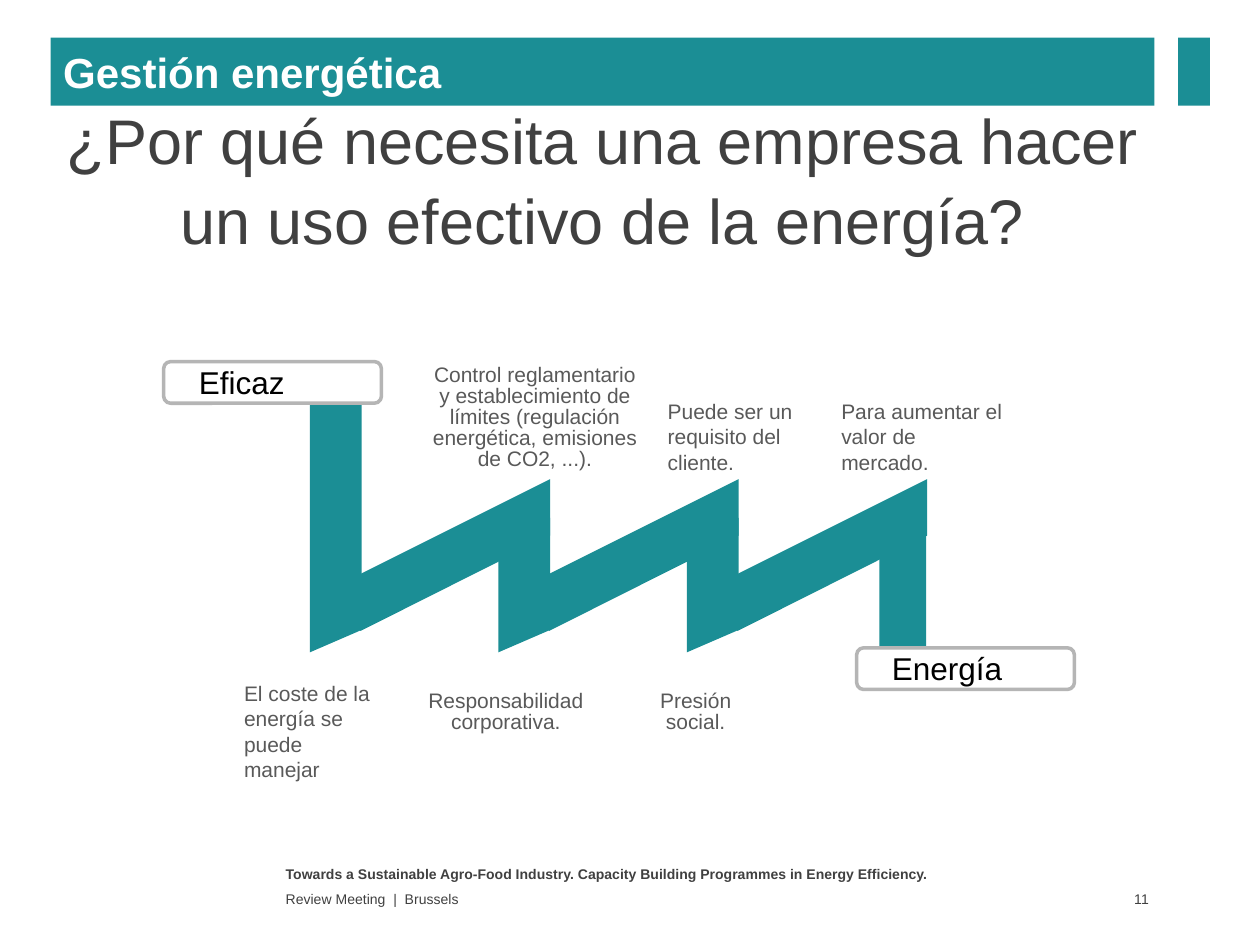
from pptx import Presentation
from pptx import util as u
from pptx.dml.color import RGBColor
from pptx.enum import shapes, text

TEAL = RGBColor(0x1B, 0x8E, 0x95)
WHITE = RGBColor(0xFF, 0xFF, 0xFF)
BLACK = RGBColor(0x00, 0x00, 0x00)
SILVER = RGBColor(0xB5, 0xB5, 0xB5)
DARK = RGBColor(0x40, 0x40, 0x40)
GREY = RGBColor(0x59, 0x59, 0x59)

LEFT, CENTER, RIGHT = text.PP_ALIGN.LEFT, text.PP_ALIGN.CENTER, text.PP_ALIGN.RIGHT
TOP, MIDDLE = text.MSO_ANCHOR.TOP, text.MSO_ANCHOR.MIDDLE

# All positions are (left, top, width, height) in centimetres.
TITLE = ("Gestión energética", (1.02, 0.76, 22.25, 1.37))
TITLE_ACCENT = (23.75, 0.76, 0.64, 1.37)
QUESTION = ("¿Por qué necesita una empresa hacer un uso efectivo de la energía?",
            (1.02, 2.13, 22.25, 2.9))

# text, position, bold, alignment, anchor
FOOTERS = [
    ("Towards a Sustainable Agro-Food Industry. Capacity Building Programmes in "
     "Energy Efficiency.", (5.51, 17.32, 13.97, 0.53), True, LEFT, TOP),
    ("Review Meeting  |  Brussels", (5.51, 17.88, 13.97, 0.48), False, LEFT, MIDDLE),
    ("11", (21.84, 17.86, 1.42, 0.51), False, RIGHT, MIDDLE),
]

# text, left and top of the box
END_LABELS = [("Eficaz", 3.3, 7.29), ("Energía", 17.27, 13.06)]
END_LABEL_SIZE = (4.39, 0.84)

# text, position, alignment, line spacing in points
REASONS = [
    ("El coste de la energía se puede manejar", (4.67, 13.59, 3.05, 2.41), LEFT, 14.5),
    ("Responsabilidad corporativa.", (8.36, 13.82, 3.68, 1.14), CENTER, 12),
    ("Presión social.", (12.5, 13.82, 3.05, 1.14), CENTER, 12),
    ("Control reglamentario y establecimiento de límites (regulación energética, "
     "emisiones de CO2, ...).", (8.36, 7.24, 4.85, 2.41), CENTER, 12),
    ("Puede ser un requisito del cliente.", (13.21, 7.9, 3.05, 1.98), LEFT, 14.5),
    ("Para aumentar el valor de mercado.", (16.71, 7.9, 3.78, 1.98), LEFT, 14.5),
]

ZIGZAG_LEFT, ZIGZAG_PITCH, STEM_WIDTH = 6.25, 3.8, 1.04
STEM_TOPS = [8.13, 10.44, 10.44]
STEM_BOTTOM_LEFT, STEM_BOTTOM_RIGHT = 13.15, 12.7
LAST_STEM = (17.73, 10.57, 0.94, 2.49)


def place(shape, position):
    for name, value in zip(("left", "top", "width", "height"), position):
        setattr(shape, name, u.Cm(value))


def paint(shape, fill, line=None):
    shape.shadow.inherit = False
    shape.fill.solid()
    shape.fill.fore_color.rgb = fill
    if line is None:
        shape.line.fill.background()
    else:
        shape.line.color.rgb = line
        shape.line.width = u.Pt(2)


def write(shape, words, size, color, bold=False, anchor=TOP, **paragraph_format):
    frame = shape.text_frame
    frame.text = words
    frame_format = {"word_wrap": True, "auto_size": text.MSO_AUTO_SIZE.NONE,
                    "vertical_anchor": anchor}
    for name, value in frame_format.items():
        setattr(frame, name, value)
    paragraph = frame.paragraphs[0]
    for name, value in paragraph_format.items():
        setattr(paragraph, name, value)
    font = paragraph.runs[0].font
    for name, value in {"name": "Arial", "size": u.Pt(size), "bold": bold}.items():
        setattr(font, name, value)
    font.color.rgb = color


def add_box(slide, position, *args, **formats):
    box = slide.shapes.add_textbox(*map(u.Cm, position))
    write(box, *args, **formats)
    return box


def add_block(slide, kind, position, fill, line=None):
    block = slide.shapes.add_shape(kind, *map(u.Cm, position))
    paint(block, fill, line)


def add_polygon(slide, points):
    start, *rest = [(u.Cm(x), u.Cm(y)) for x, y in points]
    builder = slide.shapes.build_freeform(*start)
    builder.add_line_segments(rest, close=True)
    paint(builder.convert_to_shape(), TEAL)


def add_zigzag(slide):
    """Draw three slanted-foot stems, each with its rising bar, and the last stem."""
    for index, top in enumerate(STEM_TOPS):
        left = ZIGZAG_LEFT + index * ZIGZAG_PITCH
        right = left + STEM_WIDTH
        next_right = right + ZIGZAG_PITCH
        add_polygon(slide, [(left, top), (right, top), (right, STEM_BOTTOM_RIGHT),
                            (left, STEM_BOTTOM_LEFT)])
        add_polygon(slide, [(left + 0.56, 11.8), (next_right, 9.66),
                            (next_right, 10.8), (left + 1.02, 12.72)])
    add_block(slide, shapes.MSO_SHAPE.RECTANGLE, LAST_STEM, TEAL)


def main():
    presentation = Presentation()
    presentation.slide_width, presentation.slide_height = u.Cm(25.4), u.Cm(19.05)
    slide = presentation.slides.add_slide(presentation.slide_layouts[5])

    words, position = TITLE
    title = slide.shapes.title
    place(title, position)
    paint(title, TEAL)
    write(title, words, 24, WHITE, bold=True, anchor=MIDDLE, alignment=LEFT)
    add_block(slide, shapes.MSO_SHAPE.RECTANGLE, TITLE_ACCENT, TEAL)

    words, position = QUESTION
    add_box(slide, position, words, 36, DARK, anchor=MIDDLE, alignment=CENTER,
            line_spacing=1.05)

    for words, position, bold, alignment, anchor in FOOTERS:
        box = add_box(slide, position, words, 8, DARK, bold=bold, anchor=anchor,
                      alignment=alignment)
        if alignment == RIGHT:
            box.text_frame.margin_right = u.Cm(0.1)

    add_zigzag(slide)

    for words, left, top in END_LABELS:
        add_block(slide, shapes.MSO_SHAPE.ROUNDED_RECTANGLE,
                  (left, top, *END_LABEL_SIZE), WHITE, SILVER)
        add_box(slide, (left + 0.46, top - 0.1, 3.48, 1.8), words, 18, BLACK,
                alignment=LEFT)

    for words, position, alignment, spacing in REASONS:
        add_box(slide, position, words, 12, GREY, alignment=alignment,
                line_spacing=u.Pt(spacing))

    presentation.save("out.pptx")


if __name__ == "__main__":
    main()
